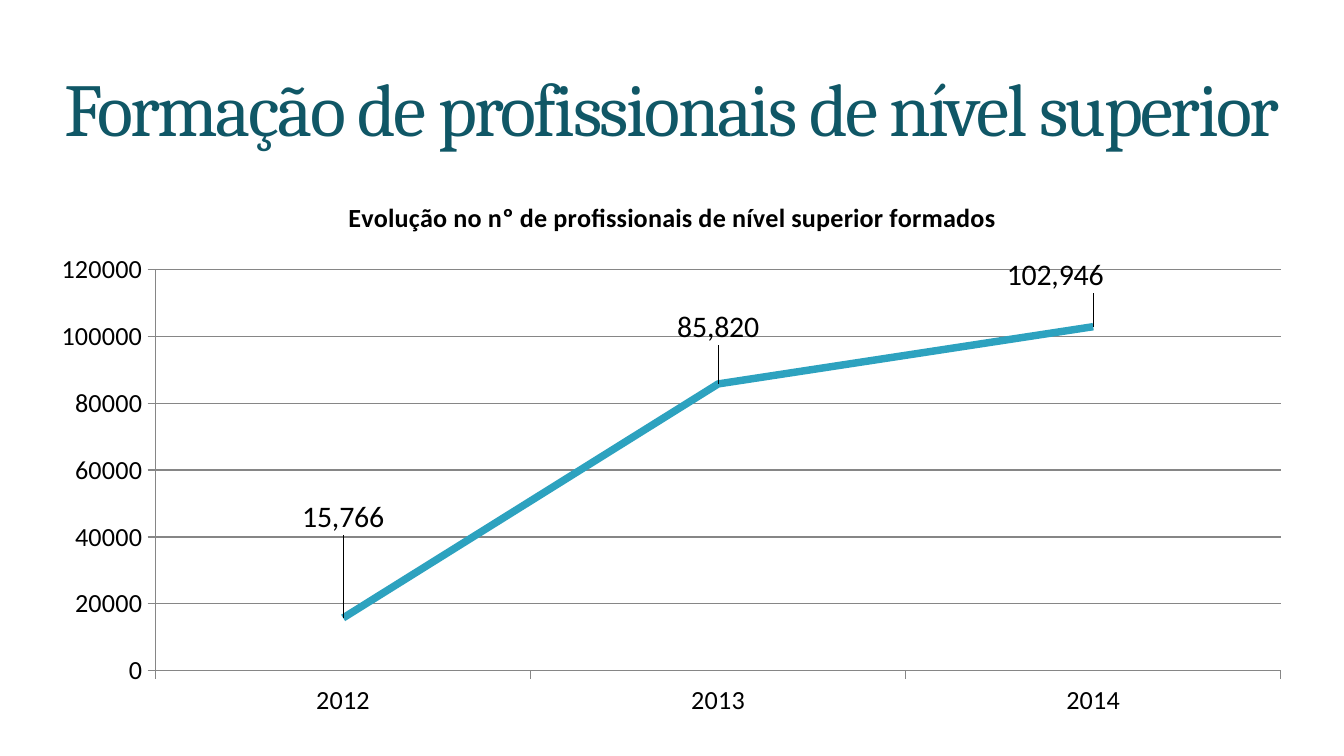
"""Build a slide with a line chart of graduated higher-education professionals."""
from typing import NamedTuple

from lxml.etree import SubElement
from pptx import Presentation
from pptx.chart.data import CategoryChartData
from pptx.chart.series import LineSeries
from pptx.dml.color import RGBColor
from pptx.enum.chart import XL_CHART_TYPE, XL_LABEL_POSITION, XL_MARKER_STYLE, XL_TICK_MARK
from pptx.enum.text import MSO_ANCHOR, PP_ALIGN
from pptx.oxml.ns import qn
from pptx.text.text import TextFrame
from pptx.util import Cm, Pt

TEAL = RGBColor(0x10, 0x57, 0x66)
BLUE = RGBColor(0x2D, 0xA2, 0xBF)
GRAY = RGBColor(0x86, 0x86, 0x86)
BLACK = RGBColor(0, 0, 0)


class YearPoint(NamedTuple):
    year: str
    graduates: int
    label_x: float
    label_y: float


POINTS = [
    YearPoint("2012", 15766, 0, -0.14),
    YearPoint("2013", 85820, 0, -0.06),
    YearPoint("2014", 102946, -0.03, -0.05),
]


def write_text(frame: TextFrame, text: str, *, size: float, font_name: str,
               color: RGBColor, bold: bool = False, spacing: int = 0) -> None:
    paragraph = frame.paragraphs[0]
    paragraph.alignment = PP_ALIGN.CENTER
    run = paragraph.add_run()
    run.text = text
    run.font.size = Pt(size)
    run.font.name = font_name
    run.font.bold = bold
    run.font.color.rgb = color
    if spacing:
        run.font._element.set("spc", str(spacing))


def make_layout(parent, **values: str | float):
    layout = SubElement(parent, qn("c:layout"))
    manual = SubElement(layout, qn("c:manualLayout"))
    for name, value in values.items():
        SubElement(manual, qn(f"c:{name}")).set("val", str(value))
    return layout


def place_label(series: LineSeries, index: int, point: YearPoint) -> None:
    label = series.points[index].data_label
    label.font.size = Pt(16)
    label.font.name = "Calibri"
    label.font.color.rgb = BLACK
    label.position = XL_LABEL_POSITION.ABOVE
    element = series._element.findall(".//" + qn("c:dLbl"))[index]
    layout = make_layout(element, x=point.label_x, y=point.label_y)
    element.insert(1, layout)
    number_format = SubElement(element, qn("c:numFmt"))
    number_format.set("formatCode", "#,##0")
    number_format.set("sourceLinked", "0")
    element.insert(2, number_format)


def add_title(slide) -> None:
    title = slide.shapes.title
    title.left, title.top, title.width, title.height = Cm(0), Cm(0.97), Cm(25.4), Cm(2.39)
    frame = title.text_frame
    frame.word_wrap = True
    frame.vertical_anchor = MSO_ANCHOR.MIDDLE
    frame.margin_left = frame.margin_right = Cm(0.1)
    frame.margin_top = frame.margin_bottom = Cm(0.1)
    write_text(frame, "Formação de profissionais de nível superior",
               size=40, font_name="Cambria", color=TEAL, spacing=-130)
    frame.paragraphs[0].line_spacing = 0.8


def add_graduates_chart(slide) -> None:
    data = CategoryChartData(number_format="0")
    data.categories = [point.year for point in POINTS]
    data.add_series("Series 1", [point.graduates for point in POINTS])
    chart = slide.shapes.add_chart(XL_CHART_TYPE.LINE, Cm(0.71), Cm(3.33),
                                   Cm(24), Cm(10.41), data).chart
    chart.has_legend = False
    chart.font.name = "Calibri"
    chart.font.size = Pt(16)
    chart.font.color.rgb = BLACK
    chart.has_title = True
    write_text(chart.chart_title.text_frame,
               "Evolução no nº de profissionais de nível superior formados",
               size=14, font_name="Calibri", color=BLACK, bold=True)
    chart.chart_title.include_in_layout = False

    for axis in (chart.category_axis, chart.value_axis):
        axis.major_tick_mark = XL_TICK_MARK.OUTSIDE
        axis.minor_tick_mark = XL_TICK_MARK.NONE
        axis.tick_labels.font.size = Pt(14)
        axis.format.line.color.rgb = GRAY
        axis.format.line.width = Pt(0.75)
    value_axis = chart.value_axis
    value_axis.minimum_scale, value_axis.maximum_scale = 0, 120000
    value_axis.major_unit = 20000
    value_axis.has_major_gridlines = True
    value_axis.major_gridlines.format.line.color.rgb = GRAY
    value_axis.major_gridlines.format.line.width = Pt(0.75)

    plot = chart.plots[0]
    plot.vary_by_categories = False
    series = plot.series[0]
    series.smooth = False
    series.marker.style = XL_MARKER_STYLE.NONE
    series.format.line.color.rgb = BLUE
    series.format.line.width = Pt(4)
    for index, point in enumerate(POINTS):
        place_label(series, index, point)

    plot_area = chart._chartSpace.chart.plotArea
    for old_layout in plot_area.findall(qn("c:layout")):
        plot_area.remove(old_layout)
    plot_area.insert(0, make_layout(plot_area, layoutTarget="inner", xMode="edge",
                                    yMode="edge", x=0.093, y=0.17, w=0.886, h=0.728))


def main() -> None:
    presentation = Presentation()
    presentation.slide_width = Cm(25.4)
    presentation.slide_height = Cm(14.29)
    slide = presentation.slides.add_slide(presentation.slide_layouts[5])
    add_title(slide)
    add_graduates_chart(slide)
    presentation.save("out.pptx")


if __name__ == "__main__":
    main()
